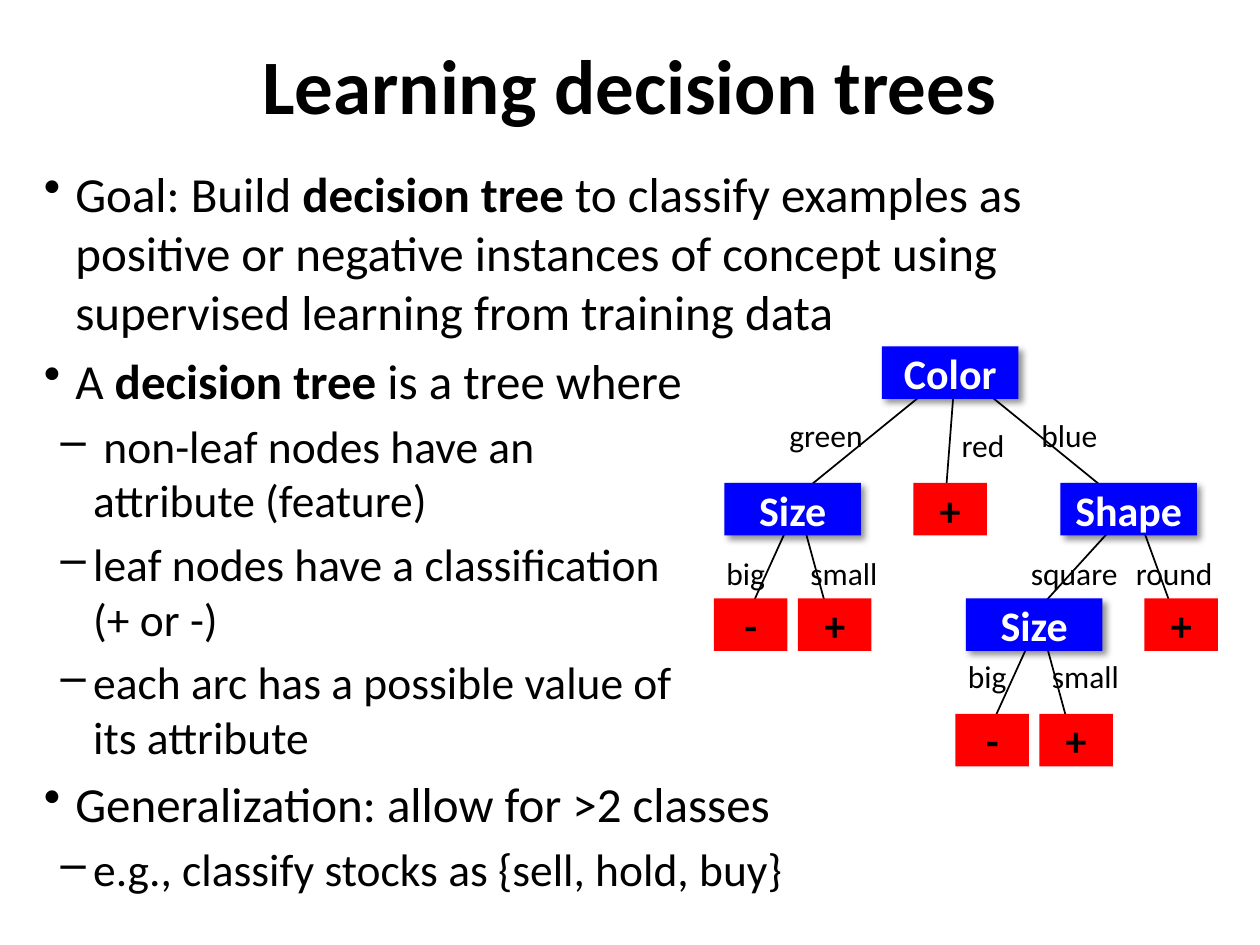
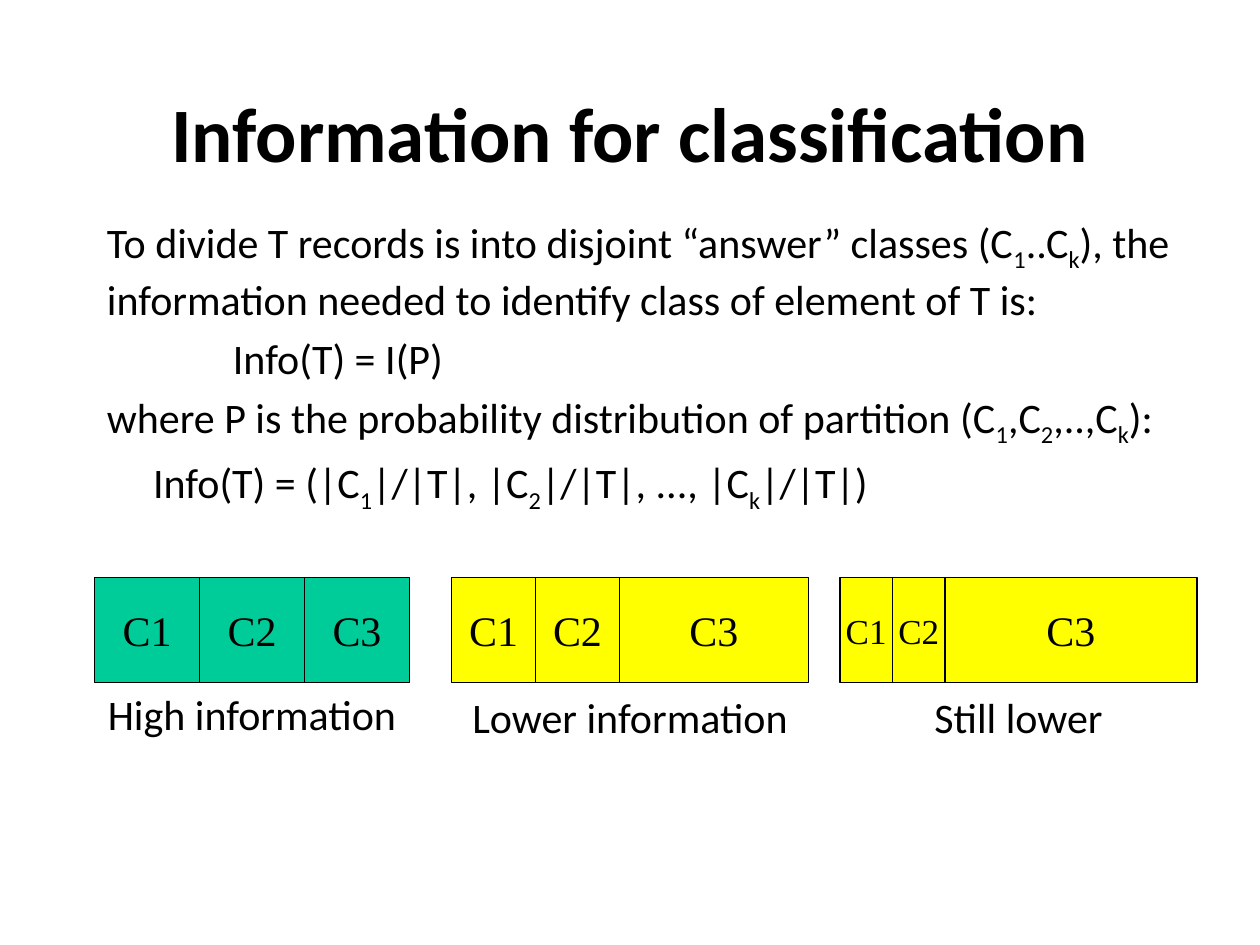
from lxml.etree import SubElement
from pptx import Presentation
from pptx.dml.color import RGBColor
from pptx.enum.shapes import MSO_CONNECTOR, MSO_SHAPE
from pptx.enum.text import MSO_ANCHOR, PP_ALIGN
from pptx.oxml import parse_xml
from pptx.oxml.ns import nsdecls, qn
from pptx.util import Emu, Pt

BLACK = RGBColor(0x00, 0x00, 0x00)
WHITE = RGBColor(0xFF, 0xFF, 0xFF)
BLUE = RGBColor(0x00, 0x00, 0xFF)
RED = RGBColor(0xFF, 0x00, 0x00)
GREEN = RGBColor(0x00, 0xCC, 0x99)
YELLOW = RGBColor(0xFF, 0xFF, 0x00)
SANS, SERIF = "Calibri", "Times New Roman"
EMU_PER_PX = 7620  # 120 px to the inch

SHADOW = f"""<a:effectLst {nsdecls("a")}>
<a:outerShdw blurRad="50800" dist="38100" dir="2700000" algn="tl" rotWithShape="0">
<a:srgbClr val="000000"><a:alpha val="43000"/></a:srgbClr></a:outerShdw></a:effectLst>"""

# Paragraph styles: left margin, first-line indent (px), bullet, text size
BULLET = (30, -30, "•", 28)
DASH = (47, -31, "–", 26)
PLAIN = (0, 0, None, 24)
TABBED = (120, 0, None, 24)
FORMULA = (74, -30, None, 24)

GOALS = [
    (BULLET, "Goal: Build *decision tree* to classify examples as positive or negative "
             "instances of concept using supervised learning from training data"),
    (BULLET, "A *decision tree* is a tree where"),
    (DASH, " non-leaf nodes have an\nattribute (feature)"),
    (DASH, "leaf nodes have a classification\n(+ or -)"),
    (DASH, "each arc has a possible value of\nits attribute"),
    (BULLET, "Generalization: allow for >2 classes"),
    (DASH, "e.g., classify stocks as {sell, hold, buy}"),
]
# Name: (text, left, top, parent)
TREE = {
    "color": ("Color", 840, 330, None),
    "size": ("Size", 690, 460, "color"),
    "red": ("+", 870, 460, "color"),
    "shape": ("Shape", 1010, 460, "color"),
    "big": ("-", 680, 570, "size"),
    "small": ("+", 760, 570, "size"),
    "square": ("Size", 920, 570, "shape"),
    "round": ("+", 1090, 570, "shape"),
    "square big": ("-", 910, 680, "square"),
    "square small": ("+", 990, 680, "square"),
}
ARC_VALUES = [
    ("green", 740, 390), ("red", 904, 400), ("blue", 980, 390),
    ("big", 680, 522), ("small", 760, 522), ("square", 970, 522),
    ("round", 1070, 522), ("big", 910, 620), ("small", 990, 620),
]
VALUE_WIDTHS = {"big": 62, "red": 66, "blue": 78, "small": 89,
                "green": 95, "round": 98, "square": 108}

INFORMATION = [
    (PLAIN, "To divide T records is into disjoint “answer” classes (C*1*..C*k*), "
            "the information needed to identify class of element of T is:"),
    (TABBED, "Info(T) = I(P)"),
    (PLAIN, "where P is the probability distribution of partition (C*1*,C*2*,..,C*k*):"),
    (FORMULA, "Info(T) = (|C*1*|/|T|, |C*2*|/|T|, ..., |C*k*|/|T|)"),
]
# Caption, caption top, bar left, class widths, fill
PARTITIONS = [
    ("High information", 650, 90, (100, 100, 100), GREEN),
    ("Lower information", 653, 430, (80, 80, 180), YELLOW),
    ("Still lower", 653, 800, (50, 50, 240), YELLOW),
]


def px(*lengths):
    return [Emu(n * EMU_PER_PX) for n in lengths]


def bold(font):
    font.bold = True


def subscript(font):
    font._element.set("baseline", "-25000")


class Deck:
    def __init__(self):
        self.prs = Presentation()
        self.prs.slide_width, self.prs.slide_height = px(1200, 900)
        self.s = None

    def style(self, r, size, color=BLACK, name=SANS):
        r.font.size, r.font.name = Pt(size), name
        r.font.color.rgb = color

    def slide(self, title, top, height):
        self.s = self.prs.slides.add_slide(self.prs.slide_layouts[5])
        sp = self.s.shapes.title
        sp.left, sp.top, sp.width, sp.height = px(90, top, 1020, height)
        tf = sp.text_frame
        tf.text, tf.vertical_anchor = title, MSO_ANCHOR.MIDDLE
        p = tf.paragraphs[0]
        p.alignment = PP_ALIGN.CENTER
        self.style(p.runs[0], 44)
        bold(p.runs[0].font)

    def body(self, box, paragraphs, emphasize):
        """Write styled paragraphs; text between asterisks is emphasized."""
        tf = self.s.shapes.add_textbox(*px(*box)).text_frame
        tf.word_wrap = True
        for i, (kind, text) in enumerate(paragraphs):
            left, indent, bullet, size = kind
            p = tf.add_paragraph() if i else tf.paragraphs[0]
            p.space_before = Pt(size * 0.2)
            pPr = p._p.get_or_add_pPr()
            pPr.set("marL", str(left * EMU_PER_PX))
            pPr.set("indent", str(indent * EMU_PER_PX))
            if bullet:
                SubElement(pPr, qn("a:buChar"), char=bullet)
            for j, part in enumerate(text.split("*")):
                for k, line in enumerate(part.split("\n")):
                    if k:
                        p.add_line_break()
                    r = p.add_run()
                    r.text = line
                    self.style(r, size)
                    if j % 2:
                        emphasize(r.font)

    def label(self, text, box, size, align=PP_ALIGN.LEFT, wrap=False):
        tf = self.s.shapes.add_textbox(*px(*box)).text_frame
        tf.text, tf.word_wrap = text, wrap
        p = tf.paragraphs[0]
        p.alignment = align
        self.style(p.runs[0], size)

    def rect(self, text, box, fill, size=24, color=BLACK, name=SANS):
        sp = self.s.shapes.add_shape(MSO_SHAPE.RECTANGLE, *px(*box))
        sp.shadow.inherit = False
        sp.fill.solid()
        sp.fill.fore_color.rgb = fill
        sp.line.fill.background()
        tf = sp.text_frame
        tf.text, tf.vertical_anchor = text, MSO_ANCHOR.MIDDLE
        p = tf.paragraphs[0]
        p.alignment = PP_ALIGN.CENTER
        self.style(p.runs[0], size, color, name)
        return sp

    def node(self, text, x, y, width):
        leaf = text in "+-"
        sp = self.rect(text, (x, y, width, 50), RED if leaf else BLUE,
                       color=BLACK if leaf else WHITE)
        sp.text_frame.word_wrap = False
        bold(sp.text_frame.paragraphs[0].runs[0].font)
        if not leaf:
            spPr = sp._element.spPr
            spPr.replace(spPr.find(qn("a:effectLst")), parse_xml(SHADOW))

    def class_box(self, text, box, fill):
        narrow = box[2] < 60
        sp = self.rect(text, box, fill, 20 if narrow else 24, name=SERIF)
        sp.line.color.rgb, sp.line.width = BLACK, Pt(0.75)
        if narrow:
            sp.text_frame.margin_left = sp.text_frame.margin_right = 0

    def arc(self, start, end):
        line = self.s.shapes.add_connector(MSO_CONNECTOR.STRAIGHT, *px(*start, *end))
        line.line.color.rgb, line.line.width = BLACK, Pt(1)
        SubElement(line._element.spPr, qn("a:effectLst"))


def node_width(text):
    return 70 if text in "+-" else 130


def draw_tree(deck):
    for text, x, y, parent in TREE.values():
        if parent:
            _, parent_x, parent_y, _ = TREE[parent]
            deck.arc((parent_x + 70, parent_y + 20),
                     (x + node_width(text) // 2 - 5, y + 20))
    for text, x, y, _ in TREE.values():
        deck.node(text, x, y, node_width(text))
    for value, x, y in ARC_VALUES:
        deck.label(value, (x, y, VALUE_WIDTHS[value], 48), 18)


def draw_partitions(deck):
    for caption, caption_top, left, widths, fill in PARTITIONS:
        x = left
        for i, width in enumerate(widths, 1):
            deck.class_box(f"C{i}", (x, 550, width, 100), fill)
            x += width
        deck.label(caption, (left, caption_top, sum(widths), 60), 24,
                   PP_ALIGN.CENTER, wrap=True)


def main():
    deck = Deck()
    deck.slide("Learning decision trees", 10, 140)
    deck.body((30, 150, 1090, 750), GOALS, bold)
    draw_tree(deck)
    deck.slide("Information for classification", 50, 150)
    deck.body((90, 200, 1050, 600), INFORMATION, subscript)
    draw_partitions(deck)
    deck.prs.save("out.pptx")


if __name__ == "__main__":
    main()
